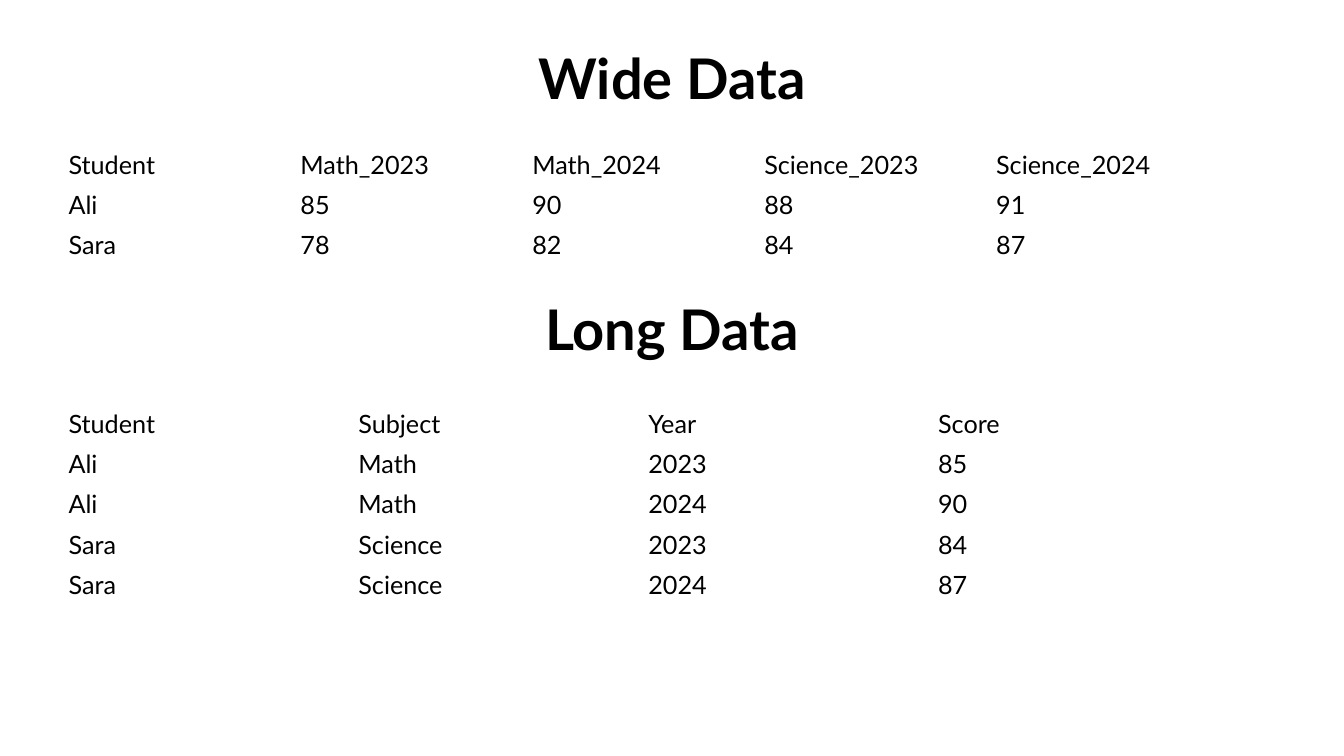
from pptx import Presentation
from pptx.dml.color import RGBColor
from pptx.enum.text import MSO_ANCHOR, PP_ALIGN
from pptx.util import Pt

PX = 9144
BLACK = RGBColor(0, 0, 0)
FONT = "Lato"
ROW = 40

WIDE = [
    ["Student", "Math_2023", "Math_2024", "Science_2023", "Science_2024"],
    ["Ali", "85", "90", "88", "91"],
    ["Sara", "78", "82", "84", "87"],
]
LONG = [
    ["Student", "Subject", "Year", "Score"],
    ["Ali", "Math", "2023", "85"],
    ["Ali", "Math", "2024", "90"],
    ["Sara", "Science", "2023", "84"],
    ["Sara", "Science", "2024", "87"],
]


def style(para, size, bold):
    """Format every run of a paragraph."""
    for run in para.runs:
        run.font.name = FONT
        run.font.size = Pt(size)
        run.font.bold = bold
        run.font.color.rgb = BLACK


def add_title(slide, text, left, top, width, height):
    """Place a centred heading in the given box."""
    box = slide.shapes.add_textbox(left * PX, top * PX, width * PX, height * PX)
    frame = box.text_frame
    frame.word_wrap = True
    frame.vertical_anchor = MSO_ANCHOR.MIDDLE
    frame.text = text
    para = frame.paragraphs[0]
    para.alignment = PP_ALIGN.CENTER
    para.line_spacing = 0.9
    para.space_before = Pt(10)
    style(para, 40, True)


def add_grid(slide, rows, left, top, width):
    """Place a plain table with equal columns and rows."""
    count = len(rows[0])
    table = slide.shapes.add_table(
        len(rows), count, left * PX, top * PX, width * PX, len(rows) * ROW * PX
    ).table
    table.first_row = False
    table.horz_banding = False
    for col in table.columns:
        col.width = width * PX // count
    for r, row in enumerate(rows):
        table.rows[r].height = ROW * PX
        for c, text in enumerate(row):
            cell = table.cell(r, c)
            cell.fill.background()
            cell.vertical_anchor = MSO_ANCHOR.MIDDLE
            cell.text_frame.text = text
            style(cell.text_frame.paragraphs[0], 18, False)


def add_block(slide, title, rows, top, gap):
    """Place a heading and the table that starts a gap below its top."""
    add_title(slide, title, 38, top, 1257, 113)
    add_grid(slide, rows, 58, top + gap, 1150)


def main():
    """Build and save the slide."""
    deck = Presentation()
    deck.slide_width = 1333 * PX
    deck.slide_height = 750 * PX
    slide = deck.slides.add_slide(deck.slide_layouts[6])
    add_block(slide, "Wide Data", WIDE, 24, 119)
    add_block(slide, "Long Data", LONG, 273, 127)
    deck.save("out.pptx")


if __name__ == "__main__":
    main()
